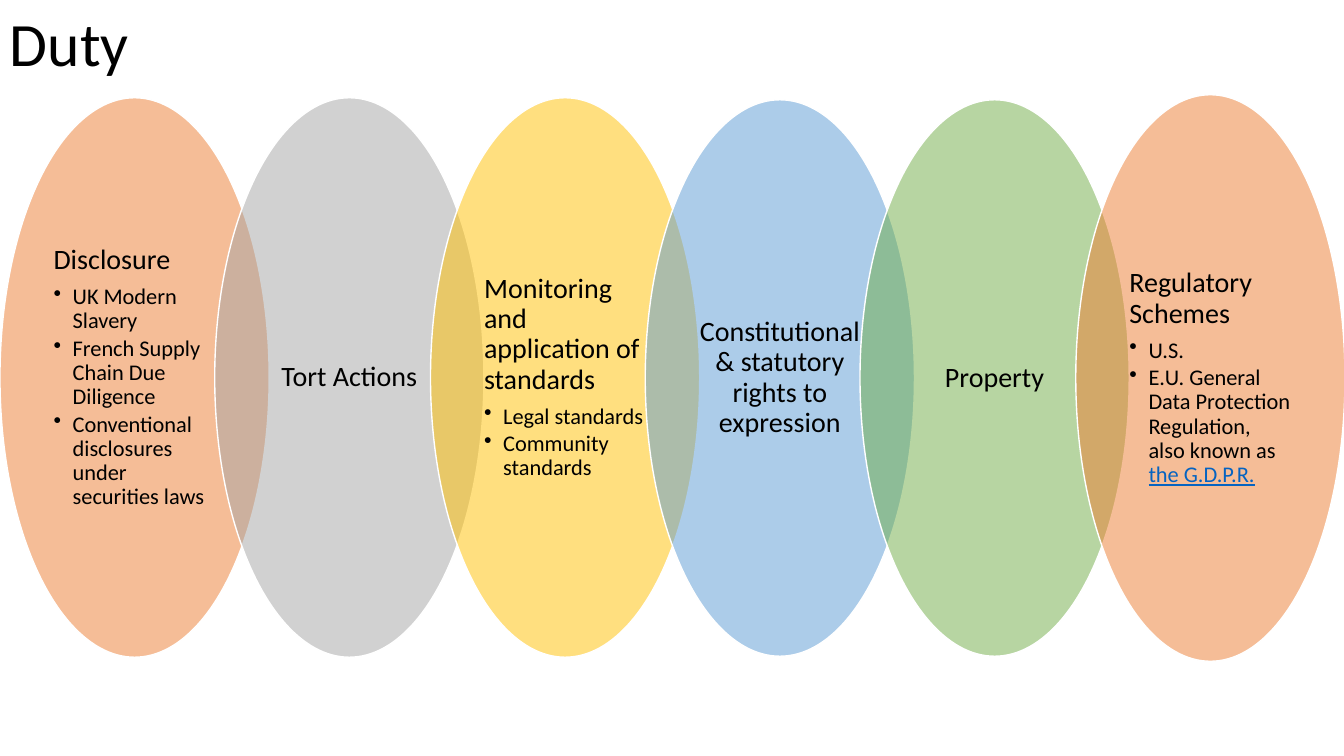
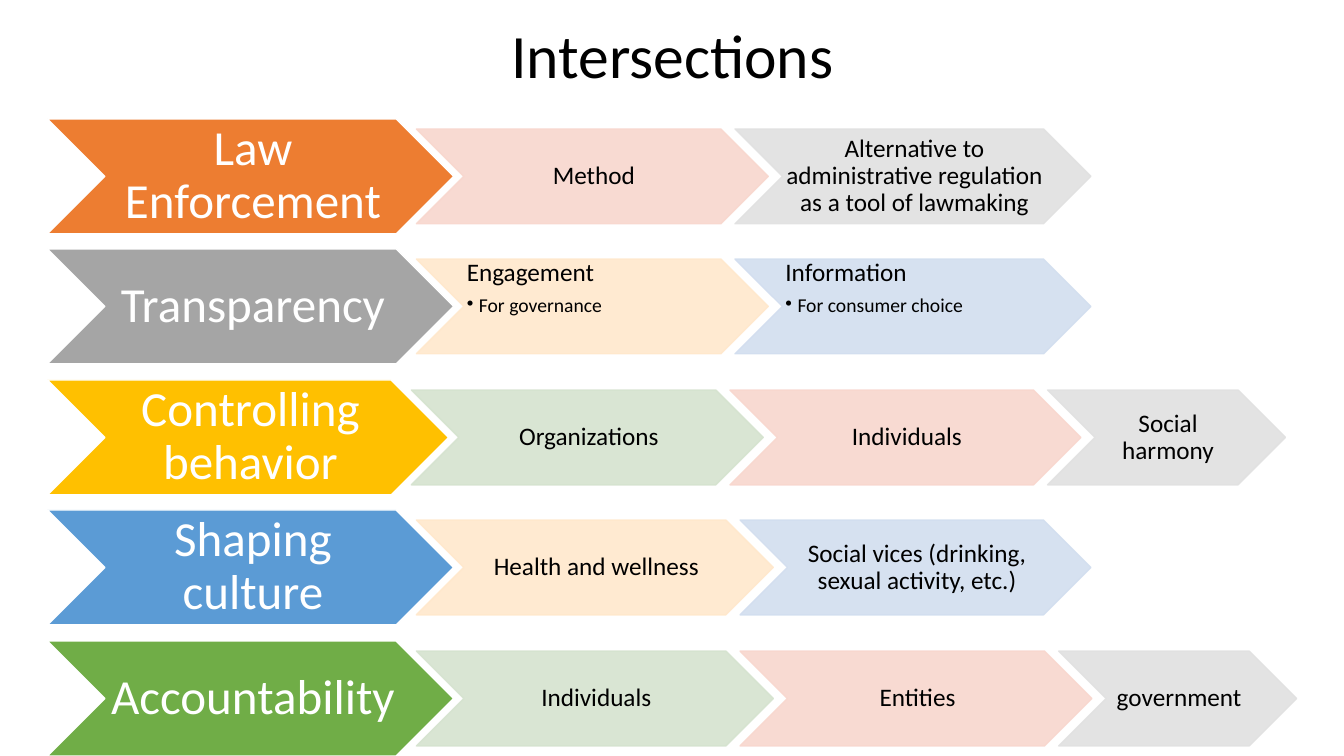
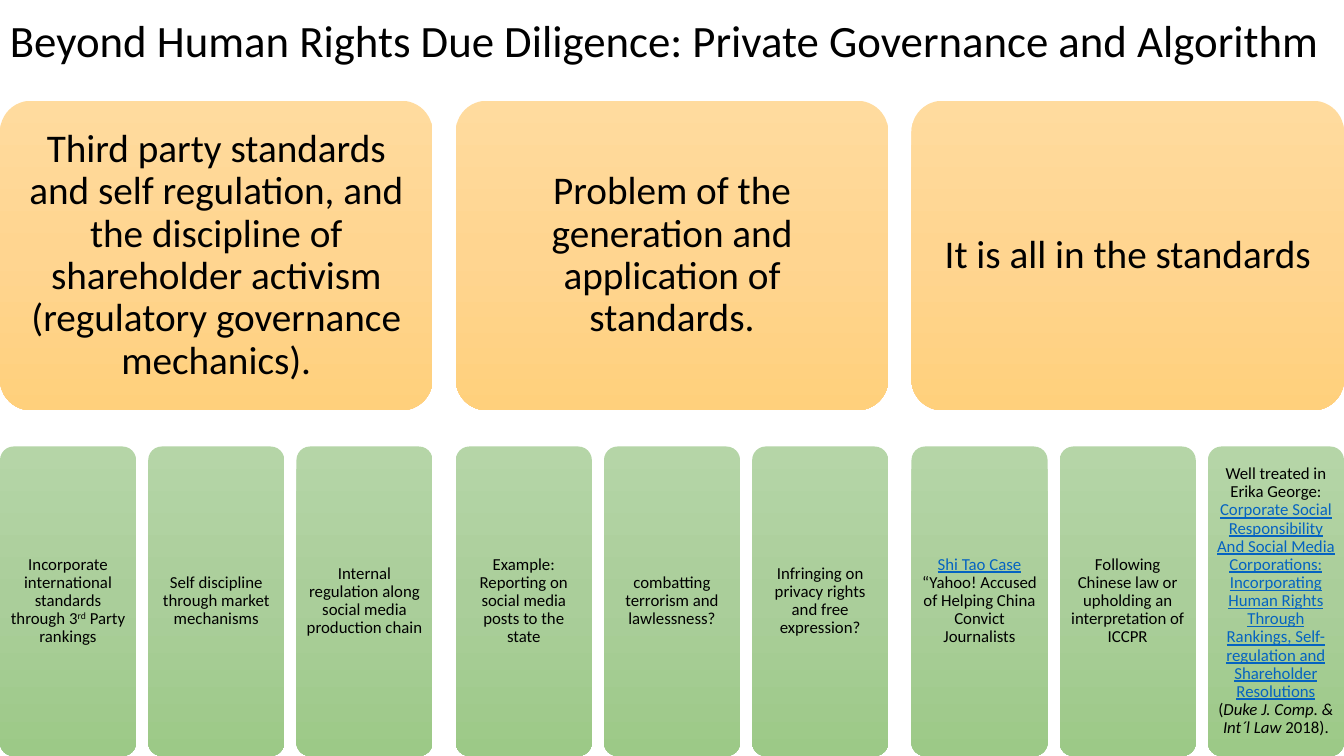
from dataclasses import dataclass
from copy import deepcopy
from itertools import cycle

from lxml.etree import SubElement
from pptx import Presentation
from pptx.dml.color import RGBColor
from pptx.enum.shapes import MSO_SHAPE as SHAPE
from pptx.enum.text import MSO_ANCHOR as ANCHOR, PP_ALIGN as ALIGN
from pptx.oxml.ns import qn
from pptx.util import Emu, Pt

EMU_PER_PX = 9144
SLIDE_W, SLIDE_H = 1333, 750


@dataclass(frozen=True)
class Theme:
    """Colours, font and type sizes shared by the slides."""
    font: str = "Calibri"
    ink: str = "000000"
    white: str = "FFFFFF"
    link: str = "0563C1"
    accents: tuple = ("ED7D31", "A5A5A5", "FFC000", "5B9BD5", "70AD47")
    tints: tuple = ("F8D7CE", "E1E1E1", "FFE8CC", "D2DEEF", "D5E3CF")
    topic_fill: tuple = ("FFDB9E", "FFD590", "FFD07C")
    detail_fill: tuple = ("B5D5A7", "AACE9A", "9CC987")
    title: int = 44
    long_title: int = 32
    stage: int = 35
    topic: int = 28
    duty: int = 20
    duty_bullet: int = 16
    step: int = 18
    step_bullet: int = 14
    detail: int = 12


T = Theme()

DUTIES = [
    (555, ["Disclosure", "UK Modern Slavery", "French Supply Chain Due Diligence",
           "Conventional disclosures under securities laws"]),
    (555, ["Tort Actions"]),
    (555, ["Monitoring and application of standards", "Legal standards",
           "Community standards"]),
    (552, ["Constitutional & statutory rights to expression"]),
    (552, ["Property"]),
    (562, ["Regulatory Schemes", "U.S.",
           [("E.U. General Data Protection Regulation, also known as ", ""),
            ("the G.D.P.R.", "link")]]),
]

INTERSECTIONS = [
    ("Law Enforcement", 403, [
        (349, ["Method"]),
        (353, ["Alternative to administrative regulation as a tool of lawmaking"])]),
    ("Transparency", 403, [
        (349, ["Engagement", "For governance"]),
        (353, ["Information", "For consumer choice"])]),
    ("Controlling behavior", 398, [
        (349, ["Organizations"]),
        (348, ["Individuals"]),
        (236, ["Social harmony"])]),
    ("Shaping culture", 403, [
        (354, ["Health and wellness"]),
        (348, ["Social vices (drinking, sexual activity, etc.)"])]),
    ("Accountability", 403, [
        (354, ["Individuals"]),
        (349, ["Entities"]),
        (236, ["government"])]),
]

TOPICS = [
    ("Third party standards and self regulation, and the discipline of "
     "shareholder activism (regulatory governance mechanics).", [
         [("Incorporate international standards through 3", ""), ("rd", "super"),
          (" Party rankings", "")],
         "Self discipline through market mechanisms",
         "Internal regulation along social media production chain"]),
    ("Problem of the generation and application of standards.", [
        "Example: Reporting on social media posts to the state",
        "combatting terrorism and lawlessness?",
        "Infringing on privacy rights and free expression?"]),
    ("It is all in the standards", [
        [("Shi Tao Case ", "link"),
         ("“Yahoo! Accused of Helping China Convict Journalists", "")],
        "Following Chinese law or upholding an interpretation of ICCPR",
        [("Well treated in Erika George: ", ""),
         ("Corporate Social Responsibility And Social Media Corporations: "
          "Incorporating Human Rights Through Rankings, Self-regulation and "
          "Shareholder Resolutions ", "link"),
         ("(", ""), ("Duke J. Comp. & Int´l Law", "italic"), (" 2018).", "")]]),
]


def px(n):
    """Turn whole px into EMU."""
    return Emu(n * EMU_PER_PX)


def rgb(colour):
    """Turn a hex string into a colour."""
    return RGBColor.from_string(colour)


def add_runs(p, content, size, colour):
    """Add a string, or a list of (text, style) pairs, to a paragraph."""
    runs = [(content, "")] if isinstance(content, str) else content
    for text, style in runs:
        r = p.add_run()
        r.text = text
        r.font.name = T.font
        r.font.size = Pt(size)
        r.font.color.rgb = rgb(T.link if style == "link" else colour)
        if style == "link":
            r.font.underline = True
        elif style == "italic":
            r.font.italic = True
        elif style == "super":
            r.font._element.set("baseline", "30000")


def add_bullet(p, indent):
    """Give a paragraph a round bullet with a hanging indent."""
    pPr = p._p.get_or_add_pPr()
    pPr.set("marL", str(px(indent)))
    pPr.set("indent", str(-px(indent)))
    SubElement(pPr, qn("a:buChar")).set("char", "•")


def write(tf, paragraphs, size, insets, colour=T.ink, bullet_size=0, indent=0,
          align=None, anchor=ANCHOR.MIDDLE):
    """Write a heading and its bullets; a heading alone is centred."""
    tf.word_wrap = True
    tf.vertical_anchor = anchor
    tf.margin_left, tf.margin_top, tf.margin_right, tf.margin_bottom = map(px, insets)
    if align is None:
        align = ALIGN.LEFT if len(paragraphs) > 1 else ALIGN.CENTER
    for i, content in enumerate(paragraphs):
        p = tf.add_paragraph() if i else tf.paragraphs[0]
        if i:
            add_bullet(p, indent)
        p.alignment = align
        p.line_spacing = 0.9
        p_size, after = (bullet_size, 0.15) if i else (size, 0.35)
        p.space_after = Pt(round(p_size * after, 1))
        add_runs(p, content, p_size, colour)


def add_title(slide, text, box, size=T.title, align=ALIGN.LEFT):
    """Add the slide title."""
    tf = slide.shapes.add_textbox(*map(px, box)).text_frame
    write(tf, [text], size, (10, 5, 10, 5), align=align)


def add_shape(slide, kind, *box):
    """Add a preset shape without a shadow."""
    sp = slide.shapes.add_shape(kind, *map(px, box))
    sp.shadow.inherit = False
    return sp


def paint(sp, fill, line, opacity=100):
    """Set fill and a 1 pt line; opacity applies wherever the fill colour is used."""
    sp.fill.solid()
    sp.fill.fore_color.rgb = rgb(fill)
    sp.line.color.rgb = rgb(line)
    sp.line.width = Pt(1)
    if opacity < 100:
        for clr in sp._element.spPr.iter(qn("a:srgbClr")):
            if clr.get("val") == fill:
                SubElement(clr, qn("a:alpha")).set("val", str(opacity * 1000))


def add_card(slide, box, stops, content, size, inset):
    """Add a rounded card with a three-stop vertical gradient."""
    sp = add_shape(slide, SHAPE.ROUNDED_RECTANGLE, *box)
    sp.adjustments[0] = 0.1
    sp.line.fill.background()
    sp.fill.gradient()
    sp.fill.gradient_angle = 270
    stop_list = sp._element.spPr.find(qn("a:gradFill")).find(qn("a:gsLst"))
    stop_list.insert(1, deepcopy(stop_list[0]))
    for stop, colour, position in zip(sp.fill.gradient_stops, stops, (0, 0.5, 1)):
        stop.color.rgb = rgb(colour)
        stop.position = position
    write(sp.text_frame, [content], size, (inset,) * 4)


def duty_slide(slide):
    """Build the row of overlapping ellipses."""
    add_title(slide, "Duty", (0, 0, 161, 93))
    for i, ((height, paragraphs), fill) in enumerate(zip(DUTIES, cycle(T.accents))):
        sp = add_shape(slide, SHAPE.OVAL, round(i * 640 / 3),
                       (SLIDE_H - height) // 2, 267, height)
        paint(sp, fill, T.white, 50)
        write(sp.text_frame, paragraphs, T.duty, (14, 3, 14, 3),
              bullet_size=T.duty_bullet, indent=19)


def intersections_slide(slide):
    """Build rows of chevrons, each led by a larger one."""
    add_title(slide, "Intersections", (92, 0, 1150, 117), align=ALIGN.CENTER)
    tints = cycle(T.tints)
    for i, ((stage, width, steps), accent) in enumerate(zip(INTERSECTIONS, T.accents)):
        left, top = 47, 118 + i * 259 // 2
        sp = add_shape(slide, SHAPE.CHEVRON, left, top, width, 114)
        paint(sp, accent, T.white)
        write(sp.text_frame, [stage], T.stage, (5, 2, 0, 2), T.white)
        left += width - 37
        for step_width, paragraphs in steps:
            tint = next(tints)
            sp = add_shape(slide, SHAPE.CHEVRON, left, top + 10, step_width, 94)
            paint(sp, tint, tint, 90)
            write(sp.text_frame, paragraphs, T.step, (3, 1, 0, 1),
                  bullet_size=T.step_bullet, indent=12,
                  anchor=ANCHOR.TOP if len(paragraphs) > 1 else ANCHOR.MIDDLE)
            left += step_width - 33


def governance_slide(slide):
    """Build three topic cards, each above three detail cards."""
    add_title(slide, "Beyond Human Rights Due Diligence: Private Governance and Algorithm",
              (0, 0, SLIDE_W, 86), T.long_title)
    for i, (topic, details) in enumerate(TOPICS):
        left = i * 452
        add_card(slide, (left, 100, 429, 307), T.topic_fill, topic, T.topic, 12)
        for j, detail in enumerate(details):
            add_card(slide, (left + j * 147, 443, 135, 307), T.detail_fill,
                     detail, T.detail, 5)


def main():
    """Build and save the presentation."""
    prs = Presentation()
    prs.slide_width, prs.slide_height = px(SLIDE_W), px(SLIDE_H)
    for build in (duty_slide, intersections_slide, governance_slide):
        build(prs.slides.add_slide(prs.slide_layouts[6]))
    prs.save("out.pptx")


if __name__ == "__main__":
    main()
